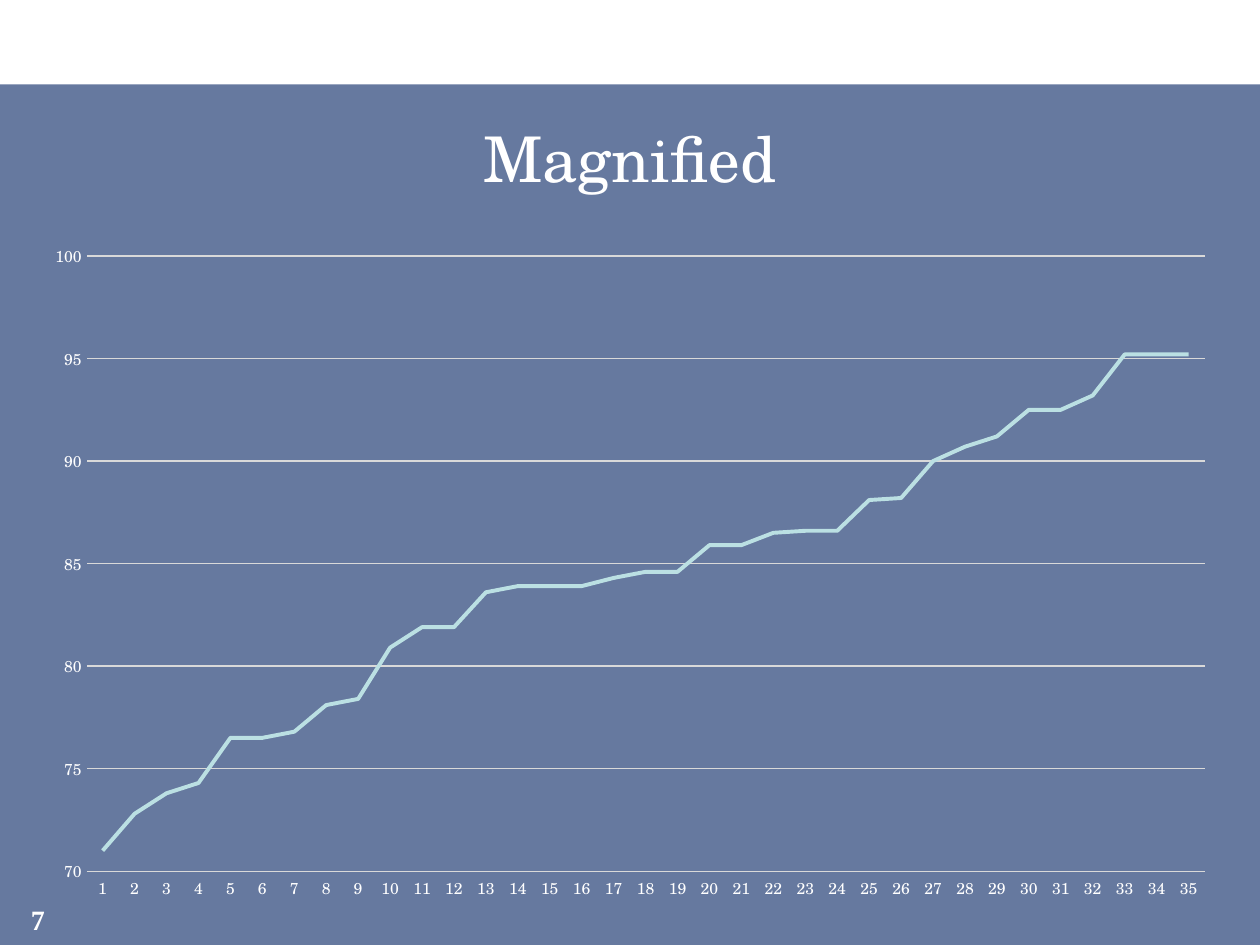
from lxml import etree
from pptx import Presentation
from pptx.chart.data import CategoryChartData
from pptx.dml.color import RGBColor
from pptx.enum.chart import XL_CHART_TYPE, XL_TICK_MARK
from pptx.enum.shapes import MSO_SHAPE
from pptx.enum.text import MSO_ANCHOR, PP_ALIGN
from pptx.oxml.ns import qn
from pptx.util import Inches, Pt

TITLE = "Magnified"
PAGE_NUMBER = "7"
VALUES = [
    71, 72.8, 73.8, 74.3, 76.5, 76.5, 76.8, 78.1, 78.4, 80.9, 81.9, 81.9,
    83.6, 83.9, 83.9, 83.9, 84.3, 84.6, 84.6, 85.9, 85.9, 86.5, 86.6, 86.6,
    88.1, 88.2, 90, 90.7, 91.2, 92.5, 92.5, 93.2, 95.2, 95.2, 95.2,
]
COLORS = {"panel": "002060", "text": "FFFFFF", "grid": "D9D9D9", "series": "BBE0E3"}
MAIN_FONT = "TeX Gyre Schola"
NUMBER_FONT = "Times New Roman"


def color(name):
    return RGBColor.from_string(COLORS[name])


def style_font(font, name, size, bold=False):
    font.name = name
    font.size = Pt(size)
    font.bold = bold
    font.color.rgb = color("text")


def style_line(line, name, width):
    line.color.rgb = color(name)
    line.width = Pt(width)


def place(shape, left, top, width, height):
    shape.left, shape.top = Inches(left), Inches(top)
    shape.width, shape.height = Inches(width), Inches(height)


def set_text(shape, text, font_name, size, bold=False):
    frame = shape.text_frame
    frame.text = text
    frame.word_wrap = True
    frame.vertical_anchor = MSO_ANCHOR.MIDDLE
    paragraph = frame.paragraphs[0]
    paragraph.alignment = PP_ALIGN.CENTER
    style_font(paragraph.runs[0].font, font_name, size, bold)


def add_panel(page):
    """Add the translucent panel behind everything else."""
    panel = page.shapes.add_shape(
        MSO_SHAPE.RECTANGLE, 0, Inches(0.67), Inches(10), Inches(6.83))
    panel.shadow.inherit = False
    panel.fill.solid()
    panel.fill.fore_color.rgb = color("panel")
    panel.line.fill.background()
    fill_color = panel.fill._xPr.find(qn("a:solidFill")).find(qn("a:srgbClr"))
    etree.SubElement(fill_color, qn("a:alpha")).set("val", "60000")
    page.shapes._spTree.insert(2, panel._element)


def add_line_chart(page):
    data = CategoryChartData()
    data.categories = [str(number) for number in range(1, len(VALUES) + 1)]
    data.add_series("Series 1", VALUES)
    chart = page.shapes.add_chart(
        XL_CHART_TYPE.LINE, Inches(0.25), Inches(1.83), Inches(9.5), Inches(5.42), data).chart
    chart.has_title = False
    chart.has_legend = False
    style_font(chart.font, MAIN_FONT, 10)

    for axis in (chart.category_axis, chart.value_axis):
        axis.major_tick_mark = axis.minor_tick_mark = XL_TICK_MARK.NONE
        style_font(axis.tick_labels.font, MAIN_FONT, 9)
    style_line(chart.category_axis.format.line, "grid", 0.75)

    value_axis = chart.value_axis
    value_axis.minimum_scale, value_axis.maximum_scale = 70, 100
    value_axis.major_unit = 5
    value_axis.format.line.fill.background()
    style_line(value_axis.major_gridlines.format.line, "grid", 0.75)

    chart.plots[0].vary_by_categories = False
    series = chart.plots[0].series[0]
    series.smooth = False
    style_line(series.format.line, "series", 2.25)


def main():
    deck = Presentation()
    deck.slide_width, deck.slide_height = Inches(10), Inches(7.5)
    page = deck.slides.add_slide(deck.slide_layouts[5])

    add_panel(page)
    title = page.shapes.title
    place(title, 0.25, 0.83, 9.5, 0.83)
    set_text(title, TITLE, MAIN_FONT, 36)
    add_line_chart(page)
    number_box = page.shapes.add_textbox(0, Inches(7.1), Inches(0.6), Inches(0.4))
    set_text(number_box, PAGE_NUMBER, NUMBER_FONT, 16, bold=True)

    deck.save("out.pptx")


if __name__ == "__main__":
    main()
